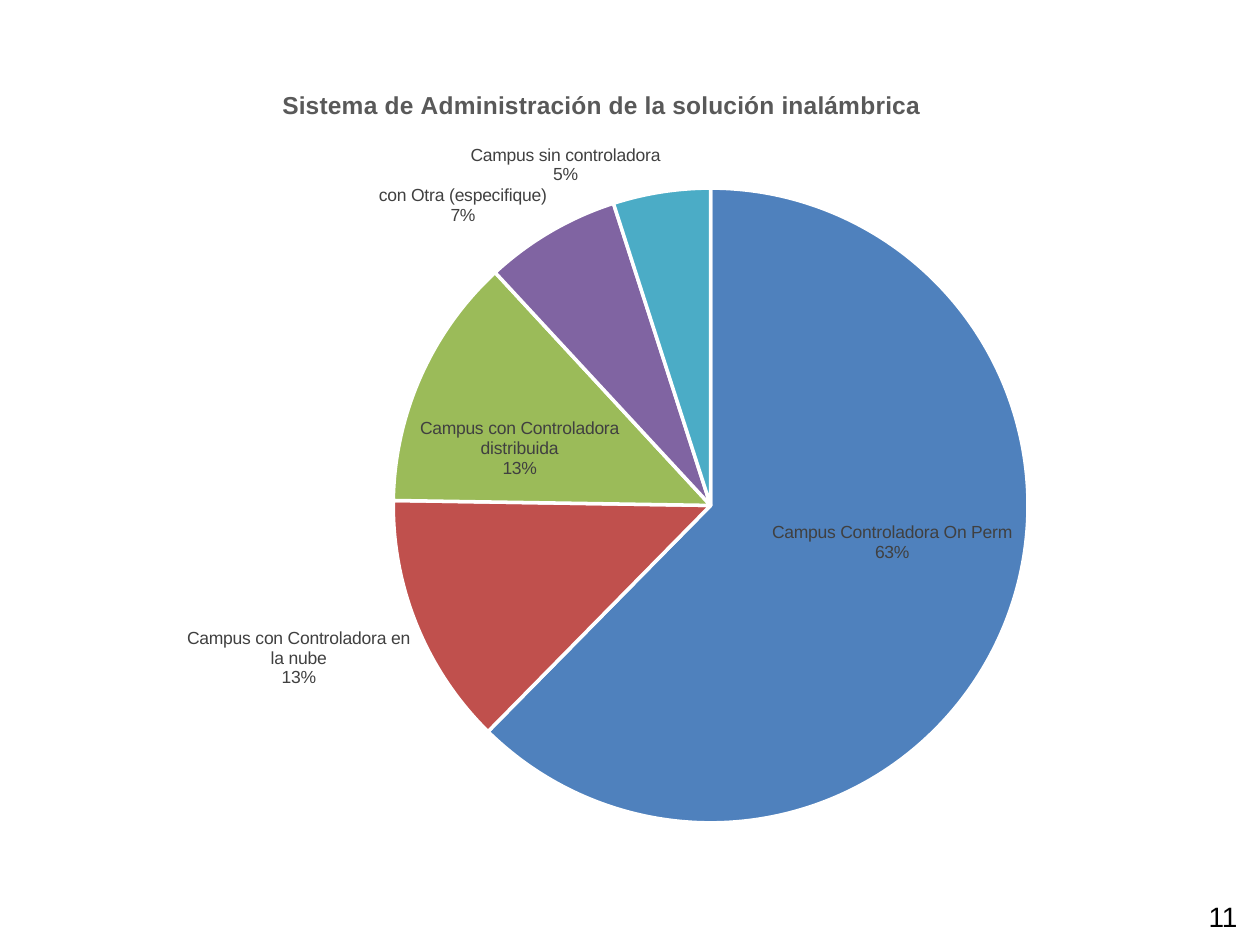
from pptx import Presentation
from pptx.chart.data import CategoryChartData
from pptx.dml.color import RGBColor
from pptx.enum.chart import XL_CHART_TYPE, XL_LABEL_POSITION
from pptx.enum.text import PP_ALIGN
from pptx.oxml import parse_xml
from pptx.oxml.ns import nsdecls
from pptx.util import Inches, Pt

FONT = "Arial"
BLACK = RGBColor(0x00, 0x00, 0x00)
WHITE = RGBColor(0xFF, 0xFF, 0xFF)
TITLE_GRAY = RGBColor(0x59, 0x59, 0x59)
LABEL_GRAY = RGBColor(0x40, 0x40, 0x40)
BLUE = RGBColor(0x4F, 0x81, 0xBD)
RED = RGBColor(0xC0, 0x50, 0x4D)
GREEN = RGBColor(0x9B, 0xBB, 0x59)
PURPLE = RGBColor(0x80, 0x64, 0xA2)
TEAL = RGBColor(0x4B, 0xAC, 0xC6)

TITLE = "Sistema de Administración de la solución inalámbrica"
SLICES = [
    ("Campus Controladora On Perm", 63, BLUE),
    ("Campus con Controladora en la nube", 13, RED),
    ("Campus con Controladora distribuida", 13, GREEN),
    ("con Otra (especifique)", 7, PURPLE),
    ("Campus sin controladora", 5, TEAL),
]
INSIDE_LABEL_OFFSETS = {0: (0.03, -0.03), 2: (-0.04, 0.01)}


def style_font(font, size, color, bold=False):
    font.name = FONT
    font.size = Pt(size)
    font.bold = bold
    font.color.rgb = color


def manual_layout(**values):
    settings = "".join(f'<c:{name} val="{value}"/>' for name, value in values.items())
    return parse_xml(
        f'<c:layout {nsdecls("c")}><c:manualLayout>{settings}</c:manualLayout></c:layout>'
    )


def show_category_and_value(labels):
    for name in ("showVal", "showCatName"):
        labels.xpath(f"c:{name}")[0].set("val", "1")
    separator = parse_xml(f'<c:separator {nsdecls("c")}>\n</c:separator>')
    labels.xpath("c:showBubbleSize")[0].addnext(separator)


def add_chart_title(chart):
    chart.has_title = True
    title = chart.chart_title
    title.include_in_layout = False
    run = title.text_frame.paragraphs[0].add_run()
    run.text = TITLE
    style_font(run.font, 14, TITLE_GRAY, bold=True)
    for layout in title._element.xpath("c:layout"):
        title._element.remove(layout)
    title._element.xpath("c:tx")[0].addnext(
        manual_layout(xMode="edge", yMode="edge", x=0.22, y=0.03)
    )


def place_plot(chart):
    plot_area = chart._chartSpace.xpath("c:chart/c:plotArea")[0]
    for layout in plot_area.xpath("c:layout"):
        plot_area.remove(layout)
    plot_area.insert(0, manual_layout(
        layoutTarget="inner", xMode="edge", yMode="edge",
        x=0.32, y=0.16, w=0.55, h=0.82,
    ))


def label_slices(series):
    labels = series.data_labels
    style_font(labels.font, 10, LABEL_GRAY)
    labels.position = XL_LABEL_POSITION.OUTSIDE_END
    show_category_and_value(labels._element)
    for index in INSIDE_LABEL_OFFSETS:
        label = series.points[index].data_label
        style_font(label.font, 10, LABEL_GRAY)
        label.position = XL_LABEL_POSITION.CENTER
    for element, (x, y) in zip(labels._element.xpath("c:dLbl"), INSIDE_LABEL_OFFSETS.values()):
        show_category_and_value(element)
        element.xpath("c:idx")[0].addnext(manual_layout(x=x, y=y))


def add_pie(slide, left, top, width, height):
    data = CategoryChartData(number_format='0"%"')
    data.categories = [name for name, _, _ in SLICES]
    data.add_series("Series 1", [value for _, value, _ in SLICES])
    chart = slide.shapes.add_chart(
        XL_CHART_TYPE.PIE, left, top, width, height, data
    ).chart
    style_font(chart.font, 10, BLACK)
    chart.has_legend = False
    add_chart_title(chart)
    place_plot(chart)
    plot = chart.plots[0]
    plot.vary_by_categories = True
    series = plot.series[0]
    for index, (_, _, color) in enumerate(SLICES):
        slice_format = series.points[index].format
        slice_format.fill.solid()
        slice_format.fill.fore_color.rgb = color
        slice_format.line.color.rgb = WHITE
        slice_format.line.width = Pt(2)
    label_slices(series)


def add_page_number(slide, left, top, width, height):
    text_frame = slide.shapes.add_textbox(left, top, width, height).text_frame
    text_frame.word_wrap = False
    paragraph = text_frame.paragraphs[0]
    paragraph.alignment = PP_ALIGN.RIGHT
    run = paragraph.add_run()
    run.text = "11"
    style_font(run.font, 16, BLACK)


def main():
    presentation = Presentation()
    presentation.slide_width = Inches(10)
    presentation.slide_height = Inches(7.5)
    slide = presentation.slides.add_slide(presentation.slide_layouts[6])
    add_page_number(slide, Inches(9.49), Inches(7.09), Inches(0.43), Inches(0.32))
    add_pie(slide, Inches(0.19), Inches(0.49), Inches(9.16), Inches(6.18))
    presentation.save("out.pptx")


if __name__ == "__main__":
    main()
